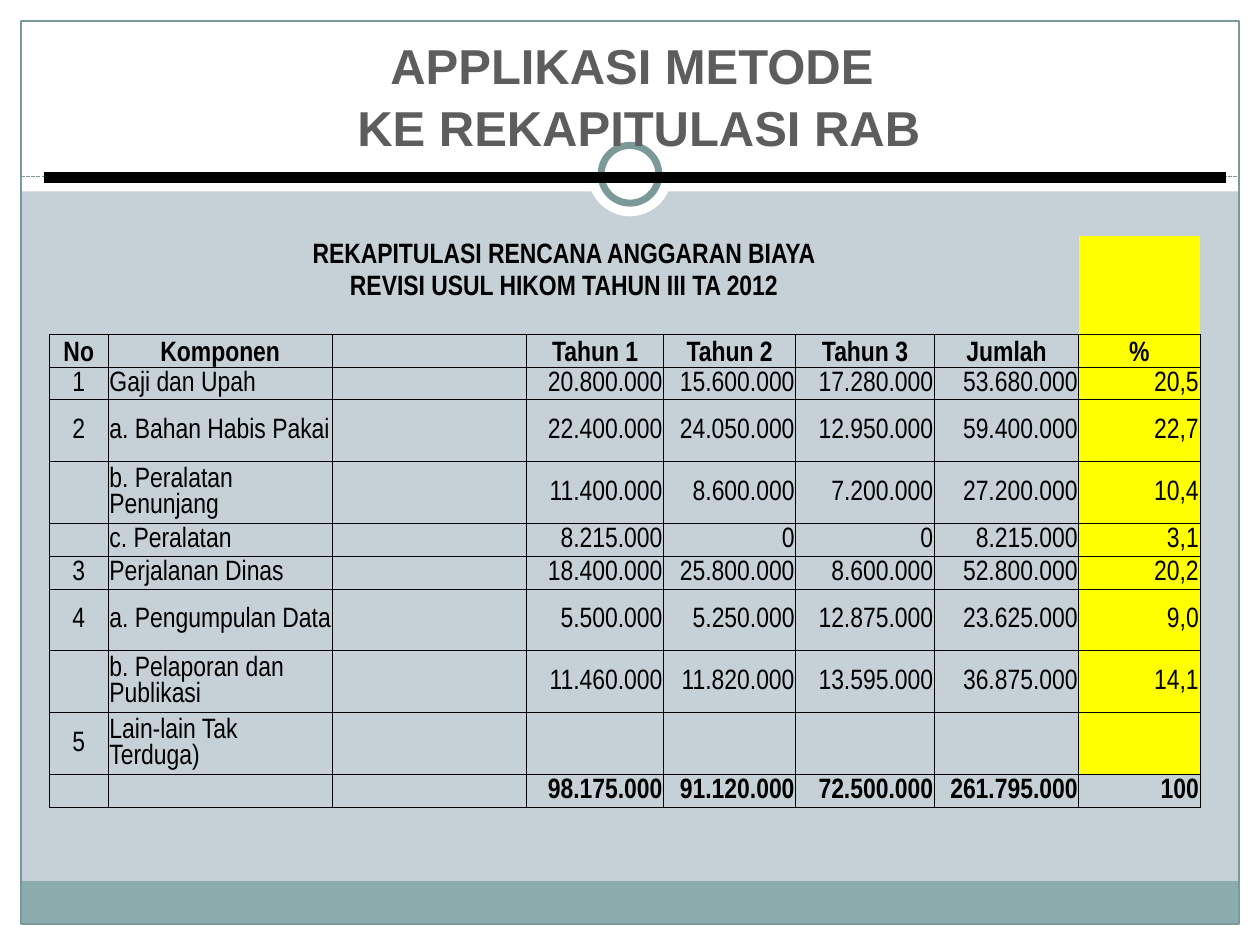
from dataclasses import dataclass

from lxml import etree
from pptx import Presentation
from pptx.dml.color import RGBColor
from pptx.enum import dml, shapes, text
from pptx.oxml import ns
from pptx.util import Pt


@dataclass(frozen=True)
class Theme:
    back: str = "C5D1D7"
    white: str = "FFFFFF"
    black: str = "000000"
    band: str = "8CADAE"
    edge: str = "7C999A"
    title: str = "5D5D5D"
    mark: str = "FFFF00"
    title_font: str = "Arial"
    table_font: str = "Arial Narrow"
    title_size: int = 28
    table_size: int = 16


T = Theme()
ALIGN = text.PP_ALIGN
CAPTIONS = ["REKAPITULASI RENCANA ANGGARAN BIAYA",
            "REVISI USUL HIKOM TAHUN III TA 2012"]
ROWS = [
    ["No", "Komponen", "", "Tahun 1", "Tahun 2", "Tahun 3", "Jumlah", "%"],
    ["1", "Gaji dan Upah", "", "20.800.000", "15.600.000", "17.280.000", "53.680.000", "20,5"],
    ["2", "a. Bahan Habis Pakai", "", "22.400.000", "24.050.000", "12.950.000", "59.400.000", "22,7"],
    ["", "b. Peralatan Penunjang", "", "11.400.000", "8.600.000", "7.200.000", "27.200.000", "10,4"],
    ["", "c. Peralatan", "", "8.215.000", "0", "0", "8.215.000", "3,1"],
    ["3", "Perjalanan Dinas", "", "18.400.000", "25.800.000", "8.600.000", "52.800.000", "20,2"],
    ["4", "a. Pengumpulan Data", "", "5.500.000", "5.250.000", "12.875.000", "23.625.000", "9,0"],
    ["", "b. Pelaporan dan Publikasi", "", "11.460.000", "11.820.000", "13.595.000", "36.875.000", "14,1"],
    ["5", "Lain-lain Tak Terduga)", "", "", "", "", "", ""],
    ["", "", "", "98.175.000", "91.120.000", "72.500.000", "261.795.000", "100"],
]
COL_WIDTHS = [33.8, 128, 111, 78.4, 75.5, 79.2, 82.6, 69.2]
LOW, TALL = 18.7, 35.4
ROW_HEIGHTS = [LOW] * 5 + [TALL] * 2 + [LOW] * 2 + [TALL] * 3 + [LOW]


def rgb(value):
    return RGBColor.from_string(value)


def add_box(s, kind, box, fill=None, line=None, width=0.75):
    sp = s.shapes.add_shape(kind, *map(Pt, box))
    sp.shadow.inherit = False
    if fill:
        sp.fill.solid()
        sp.fill.fore_color.rgb = rgb(fill)
    else:
        sp.fill.background()
    if line:
        sp.line.color.rgb = rgb(line)
        sp.line.width = Pt(width)
    else:
        sp.line.fill.background()


def add_rule(s, x1, x2, y, color, width, dash=None):
    line = s.shapes.add_connector(shapes.MSO_CONNECTOR.STRAIGHT, Pt(x1), Pt(y), Pt(x2), Pt(y))
    line.line.color.rgb = rgb(color)
    line.line.width = Pt(width)
    if dash:
        line.line.dash_style = dash
    etree.SubElement(line._element.spPr, ns.qn("a:effectLst"))


def add_frame(s, x, y, w, h):
    rect, oval = shapes.MSO_SHAPE.RECTANGLE, shapes.MSO_SHAPE.OVAL
    edge, header, rule_y = 12, 109.4, 100.8
    for box in [(x, y + h - edge, w, edge), (x, y, w, header),
                (x, y, edge, h), (x + w - edge, y, edge, h)]:
        add_box(s, rect, box, T.white)
    inner = w - 2 * edge
    add_box(s, rect, (x + edge, y + h - 36.5, inner, 24.5), T.band)
    add_box(s, rect, (x + edge, y + edge, inner, h - 2 * edge), line=T.edge)
    add_rule(s, x + edge, x + w - edge, y + rule_y, T.edge, 0.75, dml.MSO_LINE.SQUARE_DOT)
    for size, line in [(48, None), (33, T.edge)]:
        box = (x + (w - size) / 2, y + 99.6 - size / 2, size, size)
        add_box(s, oval, box, T.white, line, 4)


def add_title(s, x, y, w, h):
    sp = s.shapes.title
    s.shapes._spTree.append(sp._element)
    sp.left, sp.top, sp.width, sp.height = map(Pt, (x, y, w, h))
    tf = sp.text_frame
    tf.text = "APPLIKASI METODE \nKE REKAPITULASI RAB"
    tf.vertical_anchor = text.MSO_ANCHOR.MIDDLE
    tf.auto_size = text.MSO_AUTO_SIZE.NONE
    for p in tf.paragraphs:
        p.alignment = ALIGN.CENTER
        p.line_spacing = 1.05
        font = p.runs[0].font
        font.name, font.size, font.bold = T.title_font, Pt(T.title_size), True
        font.color.rgb = rgb(T.title)


def set_borders(cell, sides):
    tcPr = cell._tc.get_or_add_tcPr()
    for i, side in enumerate("LRTB"):
        ln = etree.Element(ns.qn(f"a:ln{side}"), w=str(Pt(0.5)))
        if side in sides:
            fill = etree.SubElement(ln, ns.qn("a:solidFill"))
            etree.SubElement(fill, ns.qn("a:srgbClr"), val=T.black)
        else:
            etree.SubElement(ln, ns.qn("a:noFill"))
        tcPr.insert(i, ln)


def set_cell(cell, value, align, bold, anchor, fill, sides):
    cell.margin_left = cell.margin_right = cell.margin_top = Pt(0.7)
    cell.margin_bottom = 0
    cell.vertical_anchor = anchor
    if fill:
        cell.fill.solid()
        cell.fill.fore_color.rgb = rgb(fill)
    else:
        cell.fill.background()
    set_borders(cell, sides)
    cell.text_frame.text = value
    p = cell.text_frame.paragraphs[0]
    p.alignment = align
    for r in p.runs:
        r.font.name, r.font.size, r.font.bold = T.table_font, Pt(T.table_size), bold
        r.font.color.rgb = rgb(T.black)
    if not value:
        etree.SubElement(p._p, ns.qn("a:endParaRPr"), sz=str(T.table_size * 50))


def add_budget(s, x, y):
    grid = [[c] + [""] * 7 for c in CAPTIONS] + [[""] * 8] + ROWS
    head, last = len(grid) - len(ROWS), len(grid) - 1
    frame = s.shapes.add_table(len(grid), len(COL_WIDTHS), Pt(x), Pt(y),
                               Pt(sum(COL_WIDTHS)), Pt(sum(ROW_HEIGHTS)))
    table = frame.table
    table.first_row = table.horz_banding = False
    for col, width in zip(table.columns, COL_WIDTHS):
        col.width = Pt(width)
    for row, height in zip(table.rows, ROW_HEIGHTS):
        row.height = Pt(height)
    body = [ALIGN.CENTER, ALIGN.LEFT] + [ALIGN.RIGHT] * 6
    for i, values in enumerate(grid):
        top = i <= head
        sides = "LRTB" if i >= head else "B" if i == head - 1 else ""
        anchor = text.MSO_ANCHOR.BOTTOM if top else text.MSO_ANCHOR.MIDDLE
        for j, value in enumerate(values):
            fill = T.mark if j == 7 and i < last else None
            set_cell(table.cell(i, j), value, ALIGN.CENTER if top else body[j],
                     top or i == last, anchor, fill, sides)
    for i in range(len(CAPTIONS)):
        table.cell(i, 0).merge(table.cell(i, 6))


def main():
    prs = Presentation()
    prs.slide_width, prs.slide_height = Pt(720), Pt(540)
    s = prs.slides.add_slide(prs.slide_layouts[5])
    s.background.fill.solid()
    s.background.fill.fore_color.rgb = rgb(T.back)
    add_frame(s, 0, 0, 720, 540)
    add_title(s, 84, 34, 562, 40)
    add_rule(s, 25.2, 700.6, 101.5, T.black, 6)
    add_budget(s, 28.1, 135)
    prs.save("out.pptx")


if __name__ == "__main__":
    main()
